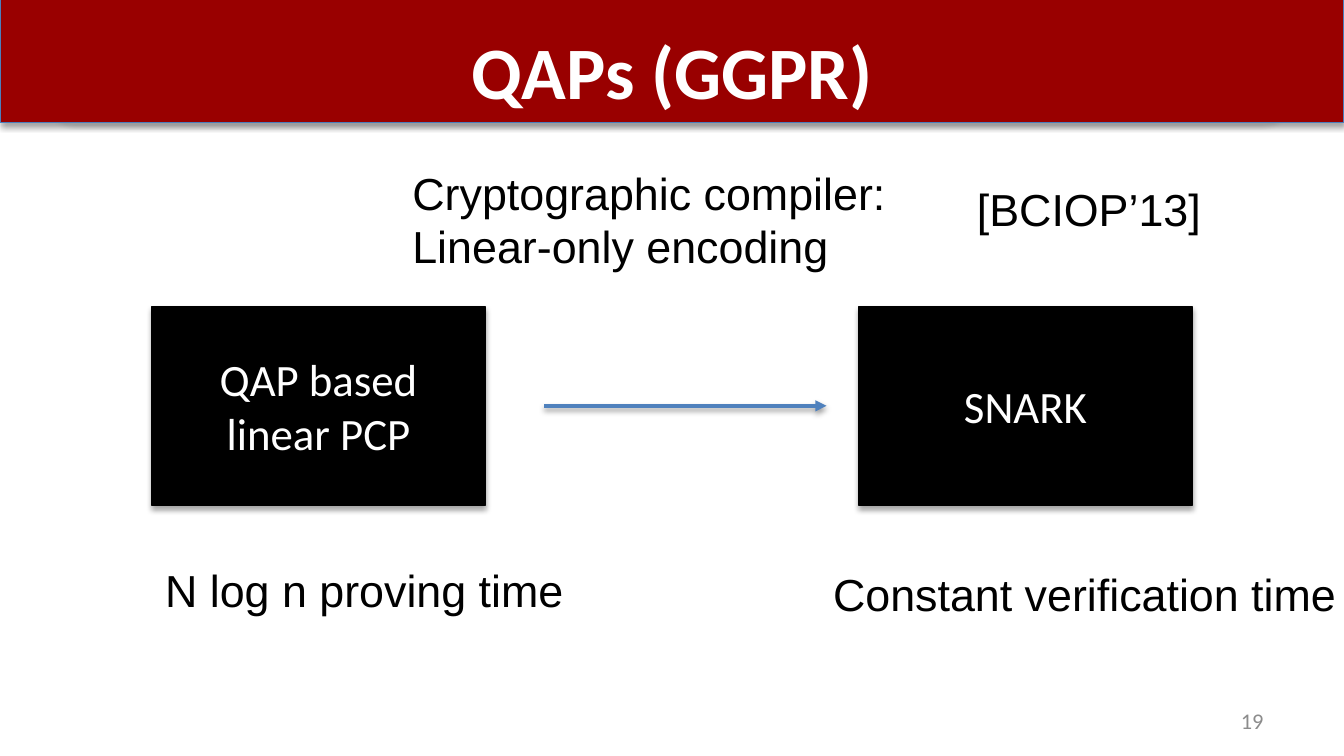
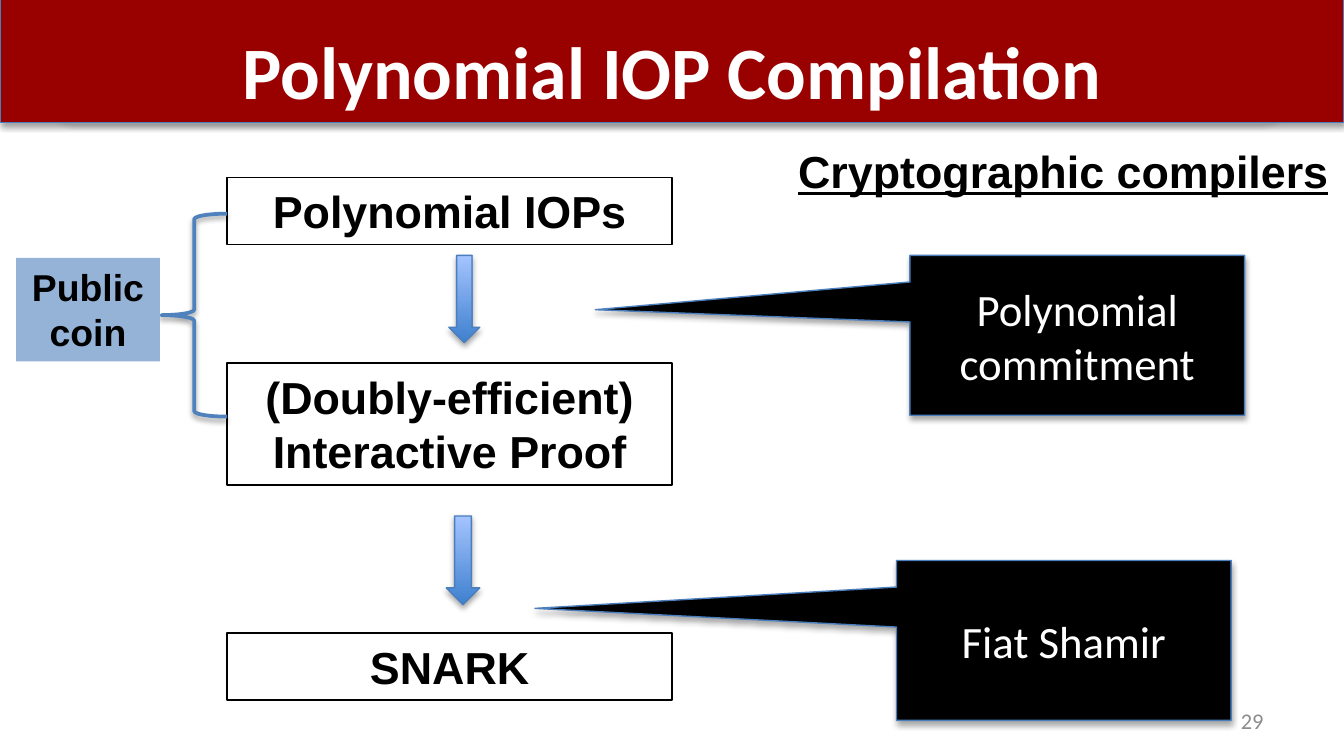
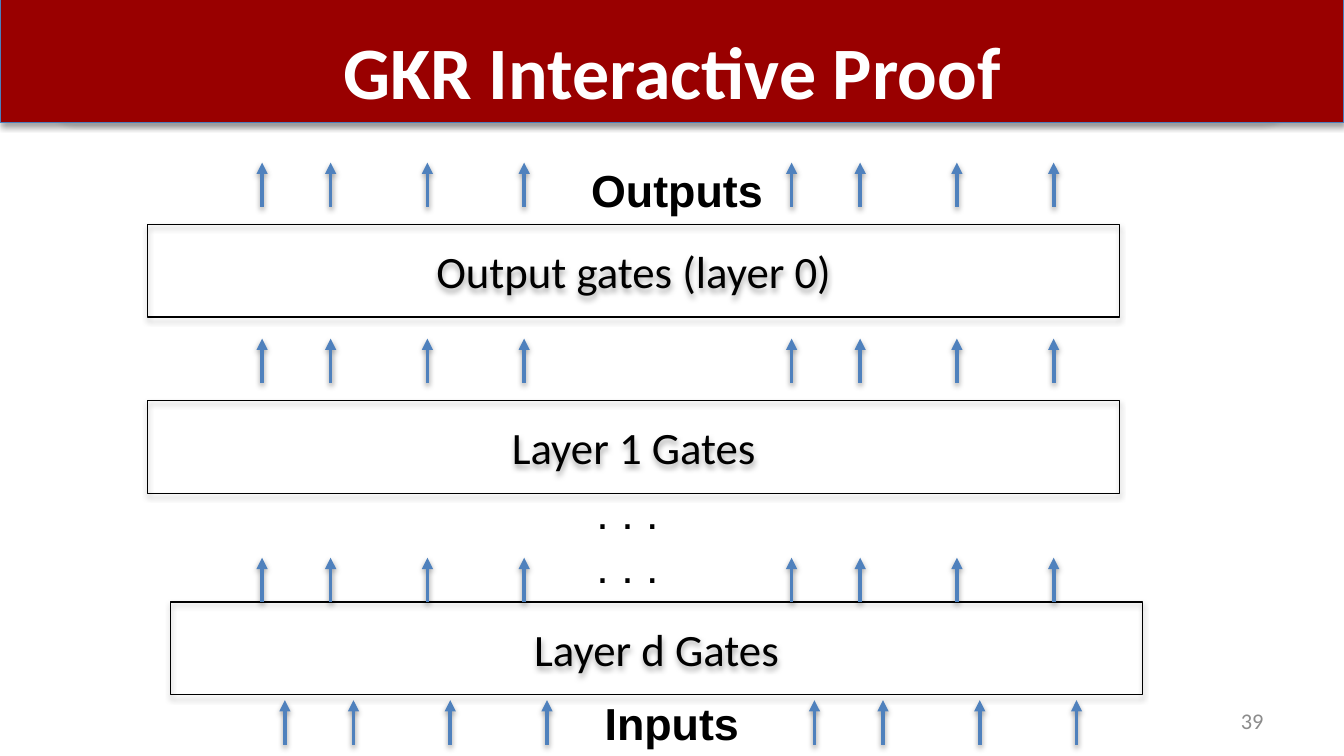
from dataclasses import dataclass
from typing import NamedTuple

from lxml import etree
from pptx import Presentation
from pptx.dml.color import RGBColor
from pptx.enum.shapes import MSO_CONNECTOR, MSO_SHAPE
from pptx.enum.text import MSO_ANCHOR, MSO_AUTO_SIZE, PP_ALIGN
from pptx.oxml.ns import qn
from pptx.util import Emu, Inches, Pt

RECT = MSO_SHAPE.RECTANGLE
ROUND_RECT = MSO_SHAPE.ROUNDED_RECTANGLE
DOWN_ARROW = MSO_SHAPE.DOWN_ARROW
CALLOUT = MSO_SHAPE.RECTANGULAR_CALLOUT
LEFT_BRACE = MSO_SHAPE.LEFT_BRACE
STRAIGHT = MSO_CONNECTOR.STRAIGHT
TOP, MIDDLE = MSO_ANCHOR.TOP, MSO_ANCHOR.MIDDLE
LEFT, CENTER, RIGHT = PP_ALIGN.LEFT, PP_ALIGN.CENTER, PP_ALIGN.RIGHT
NO_FIT, GROW = MSO_AUTO_SIZE.NONE, MSO_AUTO_SIZE.SHAPE_TO_FIT_TEXT

WIDTH = Inches(10)
COLUMNS, ROWS = 100, 56.25
UNIT = WIDTH / COLUMNS
TITLE_ONLY = 5

BLACK, WHITE, GREY = "000000", "FFFFFF", "8C8C8C"
CRIMSON, PURPLE = "990000", "7D60A0"
BLUE, EDGE_BLUE, PALE_BLUE = "4F81BD", "4B7EBC", "95B3D7"
GRADIENT = ("3F80CE", "A4C4FF")


class Cell(NamedTuple):
    col: float
    row: float
    cols: float
    rows: float


@dataclass(frozen=True)
class Style:
    size: float = 24
    font: str = "Arial"
    color: str = BLACK
    bold: bool = False
    underline: bool = False
    align: PP_ALIGN = LEFT
    anchor: MSO_ANCHOR = TOP
    fit: MSO_AUTO_SIZE = GROW
    wrap: bool = False


@dataclass(frozen=True)
class Block:
    cell: Cell
    text: str = ""
    style: Style = Style()
    kind: MSO_SHAPE = RECT
    fill: str | tuple[str, str] | None = None
    line: str | None = BLACK
    weight: float = 0.75
    shadow: int = 0
    tip: tuple[float, float] | None = None


LABEL = Style()
BOLD = Style(bold=True)
HEADING = Style(bold=True, underline=True, wrap=True)
TITLE = Style(39.6, "Calibri", WHITE, True, align=CENTER, fit=NO_FIT)
NUMBER = Style(12, "Calibri", GREY, align=RIGHT, anchor=MIDDLE, fit=NO_FIT, wrap=True)
ON_BLACK = Style(24, "Calibri", WHITE, align=CENTER, anchor=MIDDLE, fit=NO_FIT, wrap=True)
GATE = Style(24, "Calibri", BLACK, align=CENTER, anchor=MIDDLE, fit=NO_FIT, wrap=True)
STAGE = Style(bold=True, align=CENTER, wrap=True)
TAG = Style(20, bold=True, align=CENTER, wrap=True)

BANDS = (
    Block(Cell(4, 0, 91.3, 8.9), kind=ROUND_RECT, line=PURPLE, shadow=35),
    Block(Cell(0, -0.1, 100, 9.2), fill=CRIMSON, line=EDGE_BLUE, shadow=35),
)


def rgb(value: str) -> RGBColor:
    return RGBColor.from_string(value)


def grid(*lengths: float) -> list[Emu]:
    return [Emu(round(n * UNIT)) for n in lengths]


def write(tf, text: str, style: Style) -> None:
    tf.text = text
    tf.word_wrap = style.wrap
    tf.auto_size = style.fit
    tf.vertical_anchor = style.anchor
    for p in tf.paragraphs:
        p.alignment = style.align
        font = p.font
        font.name, font.size = style.font, Pt(style.size)
        font.bold, font.underline = style.bold, style.underline
        font.color.rgb = rgb(style.color)


def set_shadow(shape, alpha: int, distance: float) -> None:
    effects = etree.SubElement(shape.element.spPr, qn("a:effectLst"))
    outer = etree.SubElement(
        effects, qn("a:outerShdw"), blurRad=str(Pt(3.1)),
        dist=str(Pt(distance)), dir="5400000", rotWithShape="0")
    color = etree.SubElement(outer, qn("a:srgbClr"), val=BLACK)
    etree.SubElement(color, qn("a:alpha"), val=str(alpha * 1000))


def add_label(s, cell: Cell, text: str, style: Style = LABEL) -> None:
    write(s.shapes.add_textbox(*grid(*cell)).text_frame, text, style)


def add_block(s, block: Block):
    sp = s.shapes.add_shape(block.kind, *grid(*block.cell))
    if block.fill is None:
        sp.fill.background()
    elif isinstance(block.fill, tuple):
        sp.fill.gradient()
        sp.fill.gradient_angle = 90
        for stop, color in zip(sp.fill.gradient_stops, block.fill):
            stop.color.rgb = rgb(color)
    else:
        sp.fill.solid()
        sp.fill.fore_color.rgb = rgb(block.fill)
    if block.line:
        sp.line.color.rgb = rgb(block.line)
        sp.line.width = Pt(block.weight)
    else:
        sp.line.fill.background()
    if block.shadow:
        set_shadow(sp, block.shadow, 1.8)
    else:
        sp.shadow.inherit = False
    if block.tip:
        sp.adjustments[0], sp.adjustments[1] = block.tip
    if block.text:
        write(sp.text_frame, block.text, block.style)
    return sp


def add_arrow(s, x1: float, y1: float, x2: float, y2: float) -> None:
    line = s.shapes.add_connector(STRAIGHT, *grid(x1, y1, x2, y2))
    line.line.color.rgb = rgb(BLUE)
    line.line.width = Pt(2)
    ln = line.element.spPr.find(qn("a:ln"))
    etree.SubElement(ln, qn("a:tailEnd"), type="triangle")
    set_shadow(line, 38, 1.6)


def add_slide(prs, title: str, number: int):
    s = prs.slides.add_slide(prs.slide_layouts[TITLE_ONLY])
    heading = s.shapes.title
    heading.left, heading.top, heading.width, heading.height = grid(5, 1.4, 90, 6.8)
    write(heading.text_frame, title, TITLE)
    add_label(s, Cell(71.7, 52.1, 23.3, 3), str(number), NUMBER)
    return s


def add_master_bands(prs, s) -> None:
    tree = prs.slide_master.shapes.element
    for position, band in enumerate(BANDS, start=2):
        tree.insert(position, add_block(s, band).element)


def build_qaps(prs) -> None:
    s = add_slide(prs, "QAPs (GGPR)", 19)
    add_master_bands(prs, s)
    for col, text in ((11.3, "QAP based linear PCP"), (63.9, "SNARK")):
        add_block(s, Block(Cell(col, 22.8, 24.8, 14.8), text, ON_BLACK, fill=BLACK, shadow=35))
    add_arrow(s, 40.5, 30.2, 61.5, 30.2)
    add_label(s, Cell(29.7, 11.8, 37.6, 9.1), "Cryptographic compiler:\nLinear-only encoding")
    add_label(s, Cell(61, 41.7, 41, 5), "Constant verification time")
    add_label(s, Cell(11.3, 41.4, 32, 5), "N log n proving time")
    add_label(s, Cell(71.7, 13, 18.8, 5), "[BCIOP’13]")


def build_compilation(prs) -> None:
    s = add_slide(prs, "Polynomial IOP Compilation", 29)
    stages = (
        (13.2, 5, "Polynomial IOPs"),
        (27, 9.1, "(Doubly-efficient) Interactive Proof"),
        (47.1, 5, "SNARK"),
    )
    for row, rows, text in stages:
        add_block(s, Block(Cell(16.9, row, 33.1, rows), text, STAGE))
    for cell in (Cell(33.4, 19, 2.3, 6.5), Cell(33.2, 38.4, 2.5, 6.6)):
        add_block(s, Block(cell, kind=DOWN_ARROW, fill=GRADIENT, line=EDGE_BLUE, shadow=35))
    compilers = (
        (66.7, 41.7, "Fiat Shamir", (-1.58, -0.2)),
        (67.7, 19, "Polynomial commitment", (-1.44, -0.16)),
    )
    for col, row, text, tip in compilers:
        add_block(s, Block(Cell(col, row, 24.9, 11.9), text, ON_BLACK, CALLOUT,
                           BLACK, EDGE_BLUE, shadow=35, tip=tip))
    add_label(s, Cell(58.4, 10.2, 41.6, 5), "Cryptographic compilers", HEADING)
    add_block(s, Block(Cell(12, 15.9, 4.9, 15.1), kind=LEFT_BRACE, line=BLUE, weight=2, shadow=38))
    add_block(s, Block(Cell(1.2, 19.2, 10.7, 7.7), "Public coin", TAG, fill=PALE_BLUE, line=None))


def build_gkr(prs) -> None:
    s = add_slide(prs, "GKR Interactive Proof", 39)
    layers = (
        (11, 16.7, "Output gates (layer 0)"),
        (11, 29.8, "Layer 1 Gates"),
        (12.7, 44.8, "Layer d Gates"),
    )
    for col, row, text in layers:
        add_block(s, Block(Cell(col, row, 72.3, 6.9), text, GATE, shadow=35))
    for col, row in ((19.5, 15.4), (19.5, 28.5), (19.5, 44.8), (21.2, 55.4)):
        for group in (0, 39.4):
            for wire in (0, 5.1, 12.3, 19.5):
                x = col + group + wire
                add_arrow(s, x, row, x, row - 3.3)
    add_label(s, Cell(43.4, 35.6, 7.6, 9.1), ". . .\n. . .")
    add_label(s, Cell(44, 51.3, 12.1, 5), "Inputs", BOLD)
    add_label(s, Cell(43, 11.6, 14.9, 5), "Outputs", BOLD)


def main() -> None:
    prs = Presentation()
    prs.slide_width, prs.slide_height = grid(COLUMNS, ROWS)
    for build in (build_qaps, build_compilation, build_gkr):
        build(prs)
    prs.save("out.pptx")


if __name__ == "__main__":
    main()
